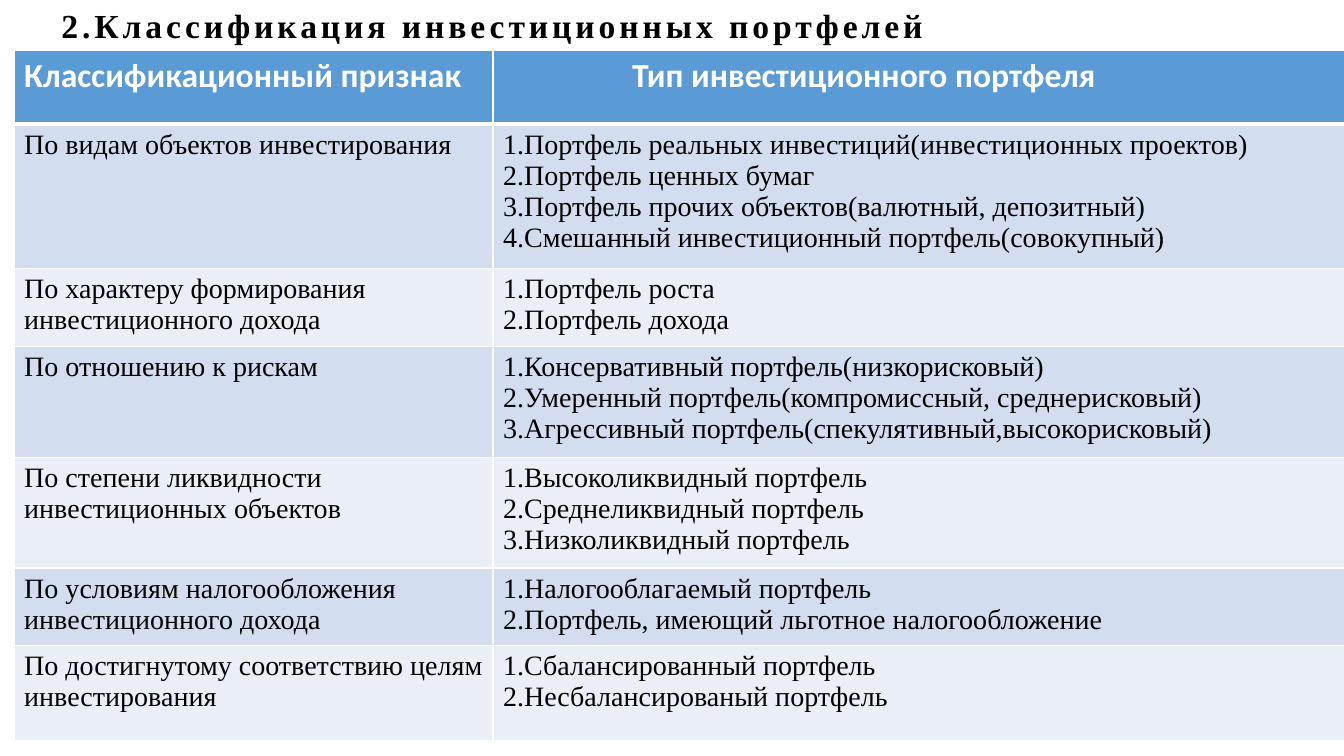
import pptx
import pptx.dml.color
import pptx.enum.text
import pptx.oxml
import pptx.oxml.ns
import pptx.util

COLOURS = {
    "text": "000000",
    "white": "FFFFFF",
    "header": "5B9BD5",
    "odd": "D2DEEF",
    "even": "EAEFF7",
}
HEADER = ["Классификационный признак", "Тип инвестиционного портфеля"]
HEADER_HEIGHT = 9.73
COLUMN_WIDTHS = [35.63, 63.39]

# Row height in percent of the slide, criterion, portfolio types
CLASSIFICATION = [
    (19.07, "По видам объектов инвестирования", [
        "1.Портфель реальных инвестиций(инвестиционных проектов)",
        "2.Портфель ценных бумаг",
        "3.Портфель прочих объектов(валютный, депозитный)",
        "4.Смешанный инвестиционный портфель(совокупный)"]),
    (10.27, "По характеру формирования инвестиционного дохода", [
        "1.Портфель роста",
        "2.Портфель дохода"]),
    (14.67, "По отношению к рискам", [
        "1.Консервативный портфель(низкорисковый)",
        "2.Умеренный портфель(компромиссный, среднерисковый)",
        "3.Агрессивный портфель(спекулятивный,высокорисковый)"]),
    (14.67, "По степени ликвидности инвестиционных объектов", [
        "1.Высоколиквидный портфель",
        "2.Среднеликвидный портфель",
        "3.Низколиквидный портфель"]),
    (10.27, "По условиям налогообложения инвестиционного дохода", [
        "1.Налогооблагаемый портфель",
        "2.Портфель, имеющий льготное налогообложение"]),
    (12.53, "По достигнутому соответствию целям инвестирования", [
        "1.Сбалансированный портфель",
        "2.Несбалансированый портфель"]),
]


class SlideBuilder:
    """Draws on one slide; lengths are percentages of its width or height."""

    serif = "Times New Roman"
    sans = "Calibri"

    def __init__(self, deck):
        self.deck = deck
        self.page = deck.slides.add_slide(deck.slide_layouts[6])

    def across(self, share):
        return round(self.deck.slide_width * share / 100)

    def down(self, share):
        return round(self.deck.slide_height * share / 100)

    def colour(self, name):
        return pptx.dml.color.RGBColor.from_string(COLOURS[name])

    def set_text(self, frame, lines, size, face, colour, bold=False):
        frame.text = "\n".join(lines)
        for para in frame.paragraphs:
            para.font.size = pptx.util.Pt(size)
            para.font.name = face
            para.font.bold = bold
            para.font.color.rgb = self.colour(colour)

    def title(self, text, left, top, width, height, spacing):
        box = self.page.shapes.add_textbox(
            self.across(left), self.down(top), self.across(width), self.down(height))
        frame = box.text_frame
        frame.word_wrap = True
        frame.auto_size = pptx.enum.text.MSO_AUTO_SIZE.SHAPE_TO_FIT_TEXT
        self.set_text(frame, [text], 24, self.serif, "text", bold=True)
        span = frame.paragraphs[0].runs[0]
        span._r.get_or_add_rPr().set("spc", str(round(spacing * 100)))

    def borders(self, cell, bottom):
        properties = cell._tc.get_or_add_tcPr()
        widths = {"lnL": 1, "lnR": 1, "lnT": 1, "lnB": bottom}
        for place, (side, width) in enumerate(widths.items()):
            properties.insert(place, pptx.oxml.parse_xml(
                f'<a:{side} {pptx.oxml.ns.nsdecls("a")} w="{pptx.util.Pt(width)}">'
                f'<a:solidFill><a:srgbClr val="{COLOURS["white"]}"/></a:solidFill>'
                f'</a:{side}>'))

    def cell(self, cell, lines, fill, header=False):
        cell.fill.solid()
        cell.fill.fore_color.rgb = self.colour(fill)
        self.borders(cell, 3 if header else 1)
        if header:
            self.set_text(cell.text_frame, lines, 24, self.sans, "white", bold=True)
        else:
            self.set_text(cell.text_frame, lines, 20, self.serif, "text")

    def table(self, left, top, widths, header_height, header, rows):
        heights = [header_height] + [height for height, *_ in rows]
        table = self.page.shapes.add_table(
            len(heights), len(widths), self.across(left), self.down(top),
            self.across(sum(widths)), self.down(sum(heights))).table
        for column, width in zip(table.columns, widths):
            column.width = self.across(width)
        for row, height in zip(table.rows, heights):
            row.height = self.down(height)
        for column, text in enumerate(header):
            self.cell(table.cell(0, column), [text], "header", header=True)
        for number, (_, criterion, types) in enumerate(rows, 1):
            fill = "odd" if number % 2 else "even"
            self.cell(table.cell(number, 0), [criterion], fill)
            self.cell(table.cell(number, 1), types, fill)
        return table

    def indent(self, cell, share):
        properties = cell.text_frame.paragraphs[0]._p.get_or_add_pPr()
        properties.set("marL", str(self.across(share)))


def main():
    deck = pptx.Presentation()
    deck.slide_width = pptx.util.Inches(13.33)
    deck.slide_height = pptx.util.Inches(7.5)
    builder = SlideBuilder(deck)
    builder.title("2.Классификация инвестиционных портфелей",
                  3.83, 0, 82.5, 6.67, spacing=2.8)
    table = builder.table(1.05, 6.67, COLUMN_WIDTHS, HEADER_HEIGHT,
                          HEADER, CLASSIFICATION)
    builder.indent(table.cell(0, 1), 9.6)
    deck.save("out.pptx")


if __name__ == "__main__":
    main()
